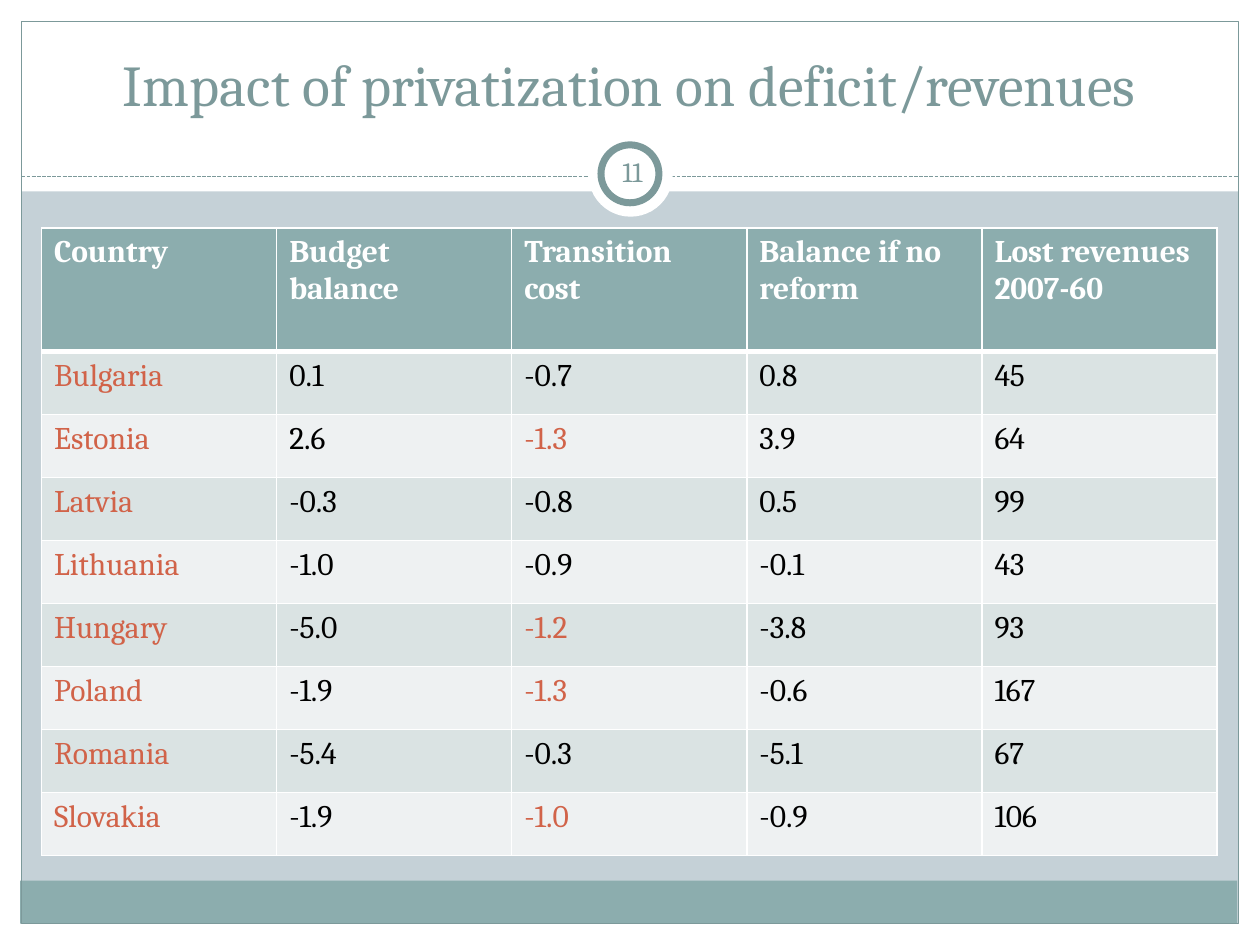
from dataclasses import dataclass

from lxml import etree
from pptx import Presentation
from pptx import util as u
from pptx.dml.color import RGBColor
from pptx.enum import dml, shapes, text
from pptx.oxml import ns

FONT = "Cambria"
COLORS = {
    "background": "C5D1D7", "white": "FFFFFF", "teal": "8CADAE", "slate": "7C999A",
    "accent": "D16349", "black": "000000", "odd_row": "DAE3E3", "even_row": "EEF1F2",
}
HEADERS = ["Country", "Budget balance", "Transition cost", "Balance if no reform", "Lost revenues 2007-60"]
COUNTRIES = [
    ["Bulgaria", "0.1", "-0.7", "0.8", "45"],
    ["Estonia", "2.6", "-1.3", "3.9", "64"],
    ["Latvia", "-0.3", "-0.8", "0.5", "99"],
    ["Lithuania", "-1.0", "-0.9", "-0.1", "43"],
    ["Hungary", "-5.0", "-1.2", "-3.8", "93"],
    ["Poland", "-1.9", "-1.3", "-0.6", "167"],
    ["Romania", "-5.4", "-0.3", "-5.1", "67"],
    ["Slovakia", "-1.9", "-1.0", "-0.9", "106"],
]
COUNTRY_COLUMN, COST_COLUMN = 0, 2
HIGH_COST = -1.0


@dataclass
class Box:
    left: float
    top: float
    width: float
    height: float

    def lengths(self) -> list[u.Length]:
        return [u.Inches(value) for value in (self.left, self.top, self.width, self.height)]


@dataclass
class Panel:
    box: Box
    fill: str | None = "white"
    line_width: float = 0
    kind: shapes.MSO_SHAPE = shapes.MSO_SHAPE.RECTANGLE


@dataclass
class Label:
    box: Box
    content: str
    size: float
    inset: tuple[float, float] = (0.1, 0.05)


PANELS = [
    Panel(Box(0, 7.33, 10, 0.17)),
    Panel(Box(0, 0, 10, 1.52)),
    Panel(Box(0, 0, 0.17, 7.5)),
    Panel(Box(9.83, 0, 0.17, 7.5)),
    Panel(Box(0.16, 6.99, 9.66, 0.34), "teal"),
    Panel(Box(0.17, 0.17, 9.66, 7.16), None, 0.75),
]
BADGE = [
    Panel(Box(4.67, 1.05, 0.67, 0.67), kind=shapes.MSO_SHAPE.OVAL),
    Panel(Box(4.77, 1.15, 0.46, 0.46), line_width=4, kind=shapes.MSO_SHAPE.OVAL),
]
LABELS = [
    Label(Box(0.33, 0.25, 9.33, 0.83), "Impact of privatization on deficit/revenues", 33),
    Label(Box(4.77, 1.12, 0.5, 0.48), "11", 16, (0.05, 0.05)),
]


def rgb(name: str) -> RGBColor:
    return RGBColor.from_string(COLORS[name])


def style_runs(text_frame, size: float, color: str, bold: bool = False) -> None:
    for paragraph in text_frame.paragraphs:
        for run in paragraph.runs:
            run.font.name, run.font.size, run.font.bold = FONT, u.Pt(size), bold
            run.font.color.rgb = rgb(color)


def draw_panel(slide, panel: Panel) -> None:
    shape = slide.shapes.add_shape(panel.kind, *panel.box.lengths())
    shape.shadow.inherit = False
    if panel.fill:
        shape.fill.solid()
        shape.fill.fore_color.rgb = rgb(panel.fill)
    else:
        shape.fill.background()
    if panel.line_width:
        shape.line.color.rgb = rgb("slate")
        shape.line.width = u.Pt(panel.line_width)
    else:
        shape.line.fill.background()


def draw_divider(slide) -> None:
    height = u.Inches(1.4)
    divider = slide.shapes.add_connector(
        shapes.MSO_CONNECTOR.STRAIGHT, u.Inches(0.17), height, u.Inches(9.83), height)
    divider.line.color.rgb = rgb("slate")
    divider.line.width = u.Pt(0.75)
    divider.line.dash_style = dml.MSO_LINE.SQUARE_DOT
    etree.SubElement(divider._element.spPr, ns.qn("a:effectLst"))


def draw_label(slide, label: Label) -> None:
    text_frame = slide.shapes.add_textbox(*label.box.lengths()).text_frame
    text_frame.word_wrap = True
    text_frame.vertical_anchor = text.MSO_ANCHOR.MIDDLE
    horizontal, vertical = map(u.Inches, label.inset)
    text_frame.margin_left = text_frame.margin_right = horizontal
    text_frame.margin_top = text_frame.margin_bottom = vertical
    text_frame.text = label.content
    text_frame.paragraphs[0].alignment = text.PP_ALIGN.CENTER
    style_runs(text_frame, label.size, "slate")


def draw_borders(cell, widths: dict[str, float]) -> None:
    properties = cell._tc.get_or_add_tcPr()
    for side, width in widths.items():
        line = etree.SubElement(properties, ns.qn(f"a:ln{side}"), w=str(u.Pt(width)))
        fill = etree.SubElement(line, ns.qn("a:solidFill"))
        etree.SubElement(fill, ns.qn("a:srgbClr"), val=COLORS["white"])


def text_color(row: int, column: int, value: str) -> str:
    if row == 0:
        return "white"
    high_cost = column == COST_COLUMN and float(value) <= HIGH_COST
    return "accent" if column == COUNTRY_COLUMN or high_cost else "black"


def draw_table(slide, box: Box) -> None:
    rows = [HEADERS, *COUNTRIES]
    table = slide.shapes.add_table(len(rows), len(HEADERS), *box.lengths()).table
    for column in table.columns:
        column.width = u.Inches(box.width / len(HEADERS))
    for index, values in enumerate(rows):
        table.rows[index].height = u.Inches(0.5 if index else 0.98)
        row_fill = ("even_row", "odd_row")[index % 2] if index else "teal"
        borders = {"L": 1, "R": 1, "T": 3 if index == 1 else 1, "B": 1 if index else 3}
        for column_index, value in enumerate(values):
            cell = table.cell(index, column_index)
            cell.text_frame.text = value
            style_runs(cell.text_frame, 18, text_color(index, column_index, value), index == 0)
            draw_borders(cell, borders)
            cell.fill.solid()
            cell.fill.fore_color.rgb = rgb(row_fill)


def main() -> None:
    """Build the slide on privatization and public revenues."""
    presentation = Presentation()
    presentation.slide_width, presentation.slide_height = u.Inches(10), u.Inches(7.5)
    slide = presentation.slides.add_slide(presentation.slide_layouts[6])
    slide.background.fill.solid()
    slide.background.fill.fore_color.rgb = rgb("background")
    for panel in PANELS:
        draw_panel(slide, panel)
    draw_divider(slide)
    for panel in BADGE:
        draw_panel(slide, panel)
    for label in LABELS:
        draw_label(slide, label)
    draw_table(slide, Box(0.33, 1.81, 9.33, 5.01))
    presentation.save("out.pptx")


if __name__ == "__main__":
    main()
